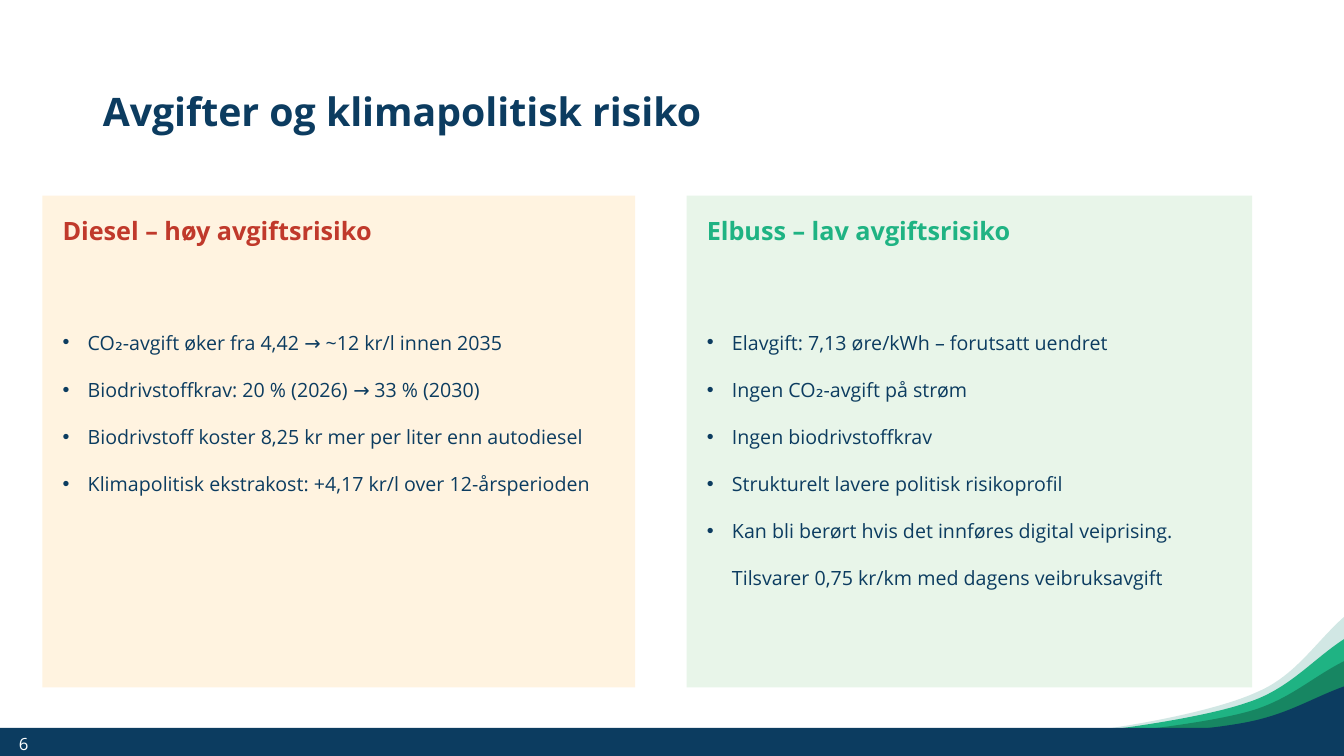
from dataclasses import dataclass

from lxml.etree import SubElement
from pptx import Presentation
from pptx.dml.color import RGBColor
from pptx.enum.shapes import MSO_SHAPE
from pptx.enum.text import MSO_ANCHOR, PP_ALIGN
from pptx.oxml.ns import qn
from pptx.util import Inches, Pt


@dataclass(frozen=True)
class Theme:
    font: str = "Open Sans"
    navy: str = "0C3C60"
    white: str = "FFFFFF"
    red: str = "C0392B"
    green: str = "1FB383"
    dark_green: str = "178662"
    mist: str = "D1E7E4"
    cream: str = "FFF3E0"
    mint: str = "E8F5E9"
    title: int = 28
    heading: int = 18
    body: int = 14
    number: int = 12


THEME = Theme()
WIDTH, HEIGHT = 13.33, 7.5
BAR_TOP = 7.22
PANEL_TOP, PANEL_HEIGHT = 1.94, 4.88

# Each wave: colour, left tip, then the points of two joined Bezier curves.
WAVES = [
    (THEME.mist, (9.01, 7.4),
     [(10.19, 7.31), (10.75, 7.29), (11.97, 7.1), (12.48, 6.86),
      (12.85, 6.7), (13.05, 6.37), (WIDTH, 6.12)]),
    (THEME.green, (8.45, 7.42),
     [(9.78, 7.35), (10.42, 7.33), (11.79, 7.17), (12.37, 6.97),
      (12.78, 6.84), (13.01, 6.55), (WIDTH, 6.34)]),
    (THEME.dark_green, (8.45, 7.42),
     [(9.79, 7.36), (10.42, 7.35), (11.8, 7.22), (12.38, 7.06),
      (12.78, 6.95), (13.01, 6.72), (WIDTH, 6.56)]),
    (THEME.navy, (8.29, 7.43),
     [(9.67, 7.38), (10.32, 7.37), (11.75, 7.28), (12.34, 7.17),
      (12.77, 7.09), (13, 6.93), (WIDTH, 6.81)]),
]

DIESEL = [
    "CO₂-avgift øker fra 4,42 → ~12 kr/l innen 2035",
    "Biodrivstoffkrav: 20 % (2026) → 33 % (2030)",
    "Biodrivstoff koster 8,25 kr mer per liter enn autodiesel",
    "Klimapolitisk ekstrakost: +4,17 kr/l over 12-årsperioden",
]
ELECTRIC = [
    "Elavgift: 7,13 øre/kWh – forutsatt uendret",
    "Ingen CO₂-avgift på strøm",
    "Ingen biodrivstoffkrav",
    "Strukturelt lavere politisk risikoprofil",
    "Kan bli berørt hvis det innføres digital veiprising. "
    "Tilsvarer 0,75 kr/km med dagens veibruksavgift",
]


def paint(sp, color):
    sp.shadow.inherit = False
    sp.fill.solid()
    sp.fill.fore_color.rgb = RGBColor.from_string(color)
    sp.line.fill.background()


def format_text(p, size, color, bold=False):
    p.alignment = PP_ALIGN.LEFT
    for r in p.runs:
        r.font.name = THEME.font
        r.font.size = Pt(size)
        r.font.bold = bold
        r.font.color.rgb = RGBColor.from_string(color)


def add_rect(s, left, top, width, height, color):
    sp = s.shapes.add_shape(MSO_SHAPE.RECTANGLE, Inches(left), Inches(top),
                            Inches(width), Inches(height))
    paint(sp, color)
    return sp


def merge_curve(lines):
    """Turn three line segments into one cubic Bezier segment."""
    curve = lines[0].makeelement(qn("a:cubicBezTo"))
    lines[0].addprevious(curve)
    for line in lines:
        curve.append(line[0])
        line.getparent().remove(line)


def add_wave(s, color, tip, crest):
    """Fill the area between a curved crest and the foot of the slide."""
    outline = [(Inches(x), Inches(y)) for x, y in [tip, *crest, (WIDTH, tip[1])]]
    builder = s.shapes.build_freeform(*outline[0], scale=1.0)
    builder.add_line_segments(outline[1:], close=True)
    sp = builder.convert_to_shape()
    lines = list(sp._element.iter(qn("a:lnTo")))
    merge_curve(lines[1:4])
    merge_curve(lines[4:7])
    paint(sp, color)


def set_title(s, text):
    sp = s.shapes.title
    sp.left, sp.top = Inches(0.92), Inches(0.4)
    sp.width, sp.height = Inches(11.5), Inches(1.45)
    tf = sp.text_frame
    tf.text = text
    tf.vertical_anchor = MSO_ANCHOR.MIDDLE
    p = tf.paragraphs[0]
    p.line_spacing = 0.9
    format_text(p, THEME.title, THEME.navy, bold=True)


def add_page_number(s, text):
    sp = s.shapes.add_textbox(Inches(0.09), Inches(7.18), Inches(0.57), Inches(0.4))
    tf = sp.text_frame
    tf.word_wrap = True
    tf.vertical_anchor = MSO_ANCHOR.MIDDLE
    tf.text = text
    format_text(tf.paragraphs[0], THEME.number, THEME.white)


def add_bullet(tf, text):
    p = tf.add_paragraph()
    p.text = text
    p.line_spacing = 2.0
    pPr = p._p.get_or_add_pPr()
    pPr.set("marL", str(Inches(0.25)))
    pPr.set("indent", str(Inches(-0.25)))
    SubElement(pPr, qn("a:buFont")).set("typeface", "Arial")
    SubElement(pPr, qn("a:buChar")).set("char", "•")
    format_text(p, THEME.body, THEME.navy)
    return p


def add_panel(s, left, width, fill, accent, heading, bullets):
    sp = add_rect(s, left, PANEL_TOP, width, PANEL_HEIGHT, fill)
    tf = sp.text_frame
    tf.word_wrap = True
    tf.vertical_anchor = MSO_ANCHOR.TOP
    tf.margin_left = tf.margin_right = Inches(0.2)
    tf.margin_top = tf.margin_bottom = Inches(0.2)
    tf.text = heading
    format_text(tf.paragraphs[0], THEME.heading, accent, bold=True)
    items = [add_bullet(tf, text) for text in bullets]
    items[0].space_before = Pt(43.5)


def main():
    prs = Presentation()
    prs.slide_width, prs.slide_height = Inches(WIDTH), Inches(HEIGHT)
    s = prs.slides.add_slide(prs.slide_layouts[5])
    for color, tip, crest in WAVES:
        add_wave(s, color, tip, crest)
    add_rect(s, 0, BAR_TOP, WIDTH, HEIGHT - BAR_TOP, THEME.navy)
    set_title(s, "Avgifter og klimapolitisk risiko")
    add_page_number(s, "6")
    add_panel(s, 0.42, 5.88, THEME.cream, THEME.red,
              "Diesel – høy avgiftsrisiko", DIESEL)
    add_panel(s, 6.81, 5.61, THEME.mint, THEME.green,
              "Elbuss – lav avgiftsrisiko", ELECTRIC)
    prs.save("out.pptx")


if __name__ == "__main__":
    main()
